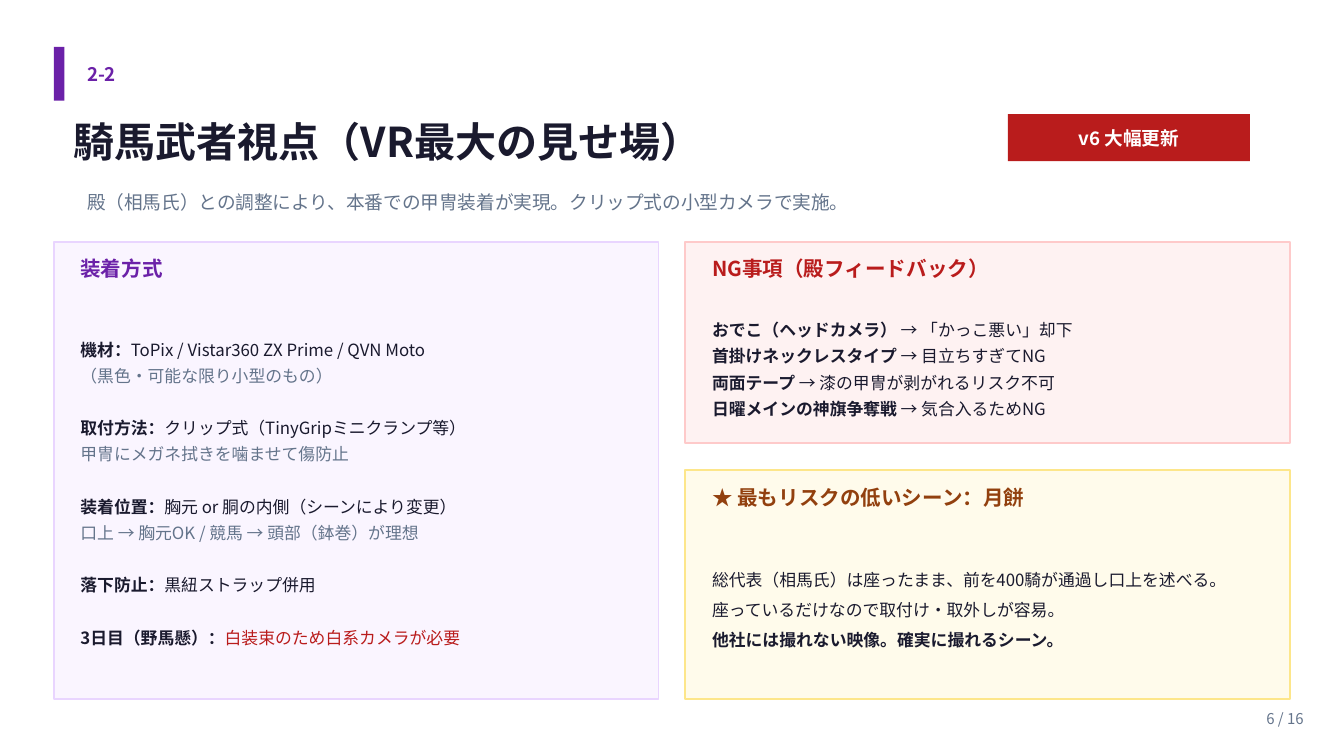
from dataclasses import dataclass

from lxml import etree
from pptx import Presentation, util as u
from pptx.dml.color import RGBColor
from pptx.enum import shapes, text
from pptx.oxml import ns

PX = 9144
SLIDE_WIDTH = 1000 * PX
SLIDE_HEIGHT = SLIDE_WIDTH * 9 // 16


@dataclass(frozen=True)
class Theme:
    font: str = "Noto Sans CJK JP"
    ink: str = "1A1A2E"
    muted: str = "64748B"
    purple: str = "6B21A8"
    red: str = "B91C1C"
    brown: str = "92400E"
    white: str = "FFFFFF"
    lilac: str = "FAF5FF"
    lilac_edge: str = "E9D5FF"
    rose: str = "FEF2F2"
    rose_edge: str = "FECACA"
    cream: str = "FFFBEB"
    cream_edge: str = "FDE68A"
    title: int = 22
    heading: int = 11
    label: int = 10
    body: int = 9
    footer: int = 8
    group_gap: int = 14


THEME = Theme()


@dataclass(frozen=True)
class Box:
    left: int
    top: int
    width: int
    height: int

    def emu(self) -> list[int]:
        return [n * PX for n in (self.left, self.top, self.width, self.height)]


@dataclass(frozen=True)
class Span:
    text: str
    color: str = THEME.ink
    bold: bool = False


@dataclass(frozen=True)
class Line:
    spans: tuple[Span, ...]
    gap: int = 0


@dataclass(frozen=True)
class Panel:
    box: Box
    fill: str
    edge: str
    heading: Span
    heading_width: int
    body_width: int
    body_height: int
    spacing: float
    lines: tuple[Line, ...]


def labelled(label: str, detail: str, gap: int = 0, color: str = THEME.ink) -> Line:
    return Line((Span(label, bold=True), Span(detail, color)), gap)


def plain(words: str, color: str = THEME.ink, bold: bool = False) -> Line:
    return Line((Span(words, color, bold),))


def style(font, span: Span) -> None:
    font.bold = span.bold
    font.color.rgb = RGBColor.from_string(span.color)


def write(frame, lines: tuple[Line, ...], size: int, spacing: float | None = None,
          align=text.PP_ALIGN.LEFT) -> None:
    frame.word_wrap = True
    frame.vertical_anchor = text.MSO_ANCHOR.MIDDLE
    for index, line in enumerate(lines):
        paragraph = frame.paragraphs[0] if index == 0 else frame.add_paragraph()
        paragraph.alignment = align
        if spacing:
            paragraph.line_spacing = spacing
        if line.gap:
            paragraph.space_before = u.Pt(line.gap)
        paragraph.font.size = u.Pt(size)
        paragraph.font.name = THEME.font
        for span in line.spans:
            run = paragraph.add_run()
            run.text = span.text
            if len(line.spans) > 1:
                style(run.font, span)
        if len(line.spans) == 1:
            style(paragraph.font, line.spans[0])
        defaults = paragraph._p.pPr.find(ns.qn("a:defRPr"))
        etree.SubElement(defaults, ns.qn("a:ea")).set("typeface", THEME.font)


def add_text(slide, box: Box, lines: tuple[Line, ...], size: int,
             spacing: float | None = None, align=text.PP_ALIGN.LEFT):
    frame = slide.shapes.add_textbox(*box.emu()).text_frame
    write(frame, lines, size, spacing, align)
    return frame


def add_block(slide, box: Box, fill: str, edge: str | None = None):
    block = slide.shapes.add_shape(shapes.MSO_SHAPE.RECTANGLE, *box.emu())
    block.shadow.inherit = False
    block.fill.solid()
    block.fill.fore_color.rgb = RGBColor.from_string(fill)
    if edge:
        block.line.color.rgb = RGBColor.from_string(edge)
        block.line.width = u.Pt(1)
    else:
        block.line.fill.background()
    return block


def add_panel(slide, panel: Panel) -> None:
    box = panel.box
    add_block(slide, box, panel.fill, panel.edge)
    add_text(slide, Box(box.left + 10, box.top + 5, panel.heading_width, 30),
             (Line((panel.heading,)),), THEME.heading)
    add_text(slide, Box(box.left + 10, box.top + 40, panel.body_width, panel.body_height),
             panel.lines, THEME.body, panel.spacing)


GAP = THEME.group_gap
PANELS = (
    Panel(Box(40, 180, 450, 340), THEME.lilac, THEME.lilac_edge,
          Span("装着方式", THEME.purple, True), 200, 430, 290, 1.3, (
              labelled("機材：", "ToPix / Vistar360 ZX Prime / QVN Moto"),
              plain("（黒色・可能な限り小型のもの）", THEME.muted),
              labelled("取付方法：", "クリップ式（TinyGripミニクランプ等）", GAP),
              plain("甲冑にメガネ拭きを噛ませて傷防止", THEME.muted),
              labelled("装着位置：", "胸元 or 胴の内側（シーンにより変更）", GAP),
              plain("口上 → 胸元OK / 競馬 → 頭部（鉢巻）が理想", THEME.muted),
              labelled("落下防止：", "黒紐ストラップ併用", GAP),
              labelled("3日目（野馬懸）：", "白装束のため白系カメラが必要", GAP, THEME.red))),
    Panel(Box(510, 180, 450, 150), THEME.rose, THEME.rose_edge,
          Span("NG事項（殿フィードバック）", THEME.red, True), 300, 420, 105, 1.3, (
              labelled("おでこ（ヘッドカメラ）", " → 「かっこ悪い」却下"),
              labelled("首掛けネックレスタイプ", " → 目立ちすぎてNG"),
              labelled("両面テープ", " → 漆の甲冑が剥がれるリスク不可"),
              labelled("日曜メインの神旗争奪戦", " → 気合入るためNG"))),
    Panel(Box(510, 350, 450, 170), THEME.cream, THEME.cream_edge,
          Span("★ 最もリスクの低いシーン：月餅", THEME.brown, True), 400, 420, 120, 1.5, (
              plain("総代表（相馬氏）は座ったまま、前を400騎が通過し口上を述べる。"),
              plain("座っているだけなので取付け・取外しが容易。"),
              plain("他社には撮れない映像。確実に撮れるシーン。", bold=True))),
)


def main() -> None:
    deck = Presentation()
    deck.slide_width, deck.slide_height = SLIDE_WIDTH, SLIDE_HEIGHT
    slide = deck.slides.add_slide(deck.slide_layouts[6])

    add_block(slide, Box(40, 35, 8, 40), THEME.purple)
    add_text(slide, Box(55, 35, 200, 40), (plain("2-2", THEME.purple, True),), THEME.label)
    title = add_text(slide, Box(55, 80, 900, 50),
                     (plain("騎馬武者視点（VR最大の見せ場）", bold=True),), THEME.title)
    title.margin_left = title.margin_top = title.margin_right = title.margin_bottom = 0
    badge = add_block(slide, Box(750, 85, 180, 35), THEME.red)
    write(badge.text_frame, (plain("v6 大幅更新", THEME.white, True),), THEME.label,
          align=text.PP_ALIGN.CENTER)
    add_text(slide, Box(55, 135, 900, 30),
             (plain("殿（相馬氏）との調整により、本番での甲冑装着が実現。クリップ式の小型カメラで実施。",
                    THEME.muted),), THEME.label)
    for panel in PANELS:
        add_panel(slide, panel)
    add_text(slide, Box(900, 520, 80, 30), (plain("6 / 16", THEME.muted),), THEME.footer,
             align=text.PP_ALIGN.RIGHT)
    deck.save("out.pptx")


if __name__ == "__main__":
    main()
